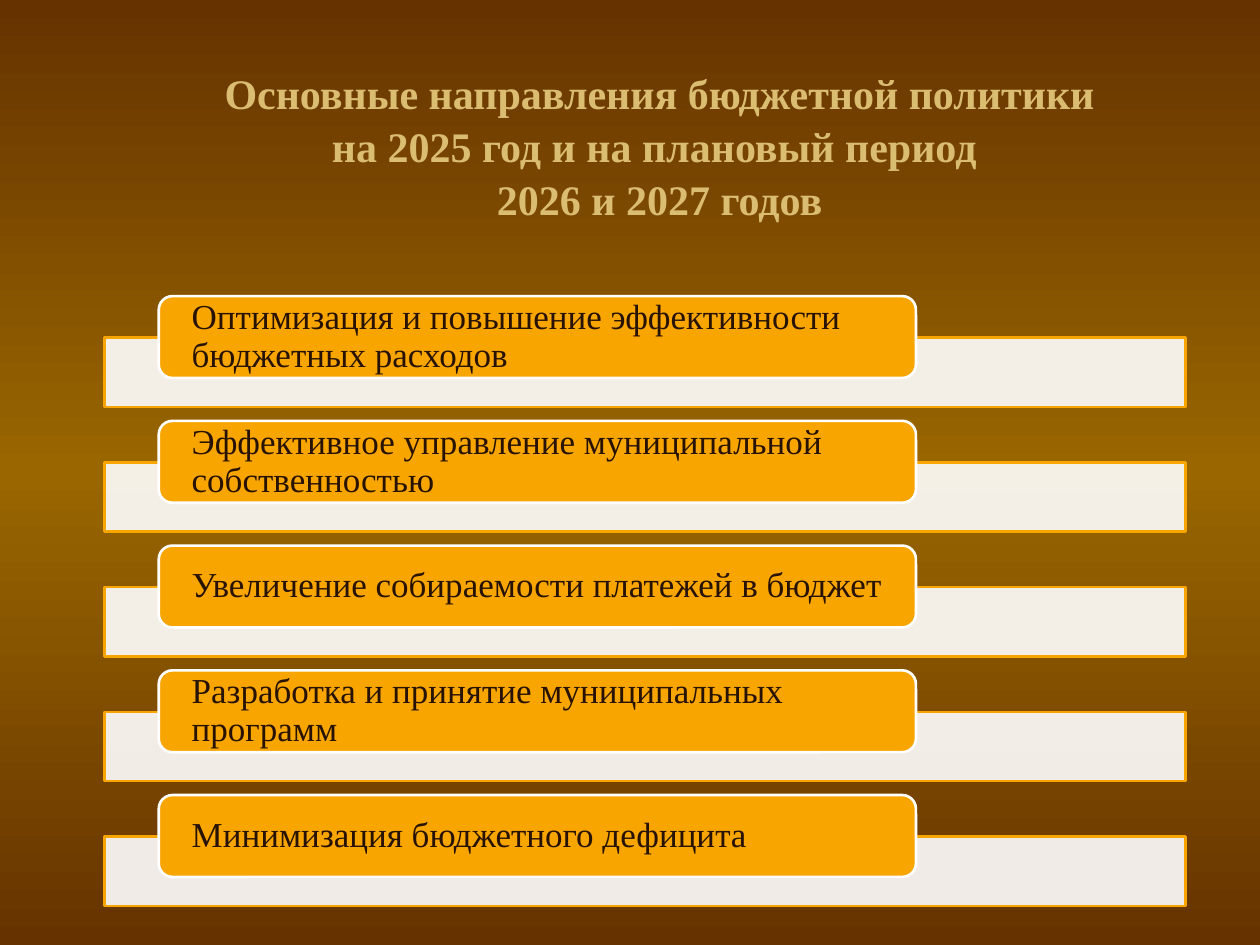
import copy

import lxml.etree
import pptx
import pptx.dml.color
import pptx.enum.shapes
import pptx.enum.text
import pptx.oxml.ns
import pptx.util

Inches = pptx.util.Inches
SHAPES = pptx.enum.shapes.MSO_SHAPE
ALIGN = pptx.enum.text.PP_ALIGN

FONT = "Times New Roman"
BROWN, OCHRE = "663300", "996600"
SAND, ORANGE, WHITE, DARK = "DBBD71", "F8A500", "FFFFFF", "281302"

TITLE = ("Основные направления бюджетной политики\v"
         "на 2025 год и на плановый период \v"
         "2026 и 2027 годов")
DIRECTIONS = [
    "Оптимизация и повышение эффективности бюджетных расходов",
    "Эффективное управление муниципальной собственностью",
    "Увеличение собираемости платежей в бюджет",
    "Разработка и принятие муниципальных программ",
    "Минимизация бюджетного дефицита",
]
FIRST_TOP, PITCH = 2.35, 0.99


def color(value):
    """Return the colour for a hex string."""
    return pptx.dml.color.RGBColor.from_string(value)


def paint_background(slide, stops):
    """Fill the slide with a vertical gradient of (position, colour) stops."""
    fill = slide.background.fill
    fill.gradient()
    fill.gradient_angle = 90
    stop_list = slide.element.xpath(".//a:gsLst")[0]
    while len(stop_list) < len(stops):
        stop_list.append(copy.deepcopy(stop_list[-1]))
    for stop, (position, value) in zip(fill.gradient_stops, stops):
        stop.position = position
        stop.color.rgb = color(value)


def write_text(shape, text, size, value, align, bold=False, side=0.1, spacing=1.0):
    """Put one vertically centred paragraph into a shape."""
    frame = shape.text_frame
    frame.word_wrap = True
    frame.vertical_anchor = pptx.enum.text.MSO_ANCHOR.MIDDLE
    frame.margin_left = frame.margin_right = Inches(side)
    frame.margin_top = frame.margin_bottom = 0
    frame.text = text
    para = frame.paragraphs[0]
    para.alignment = align
    para.line_spacing = spacing
    for span in para.runs:
        span.font.name = FONT
        span.font.size = pptx.util.Pt(size)
        span.font.bold = bold
        span.font.color.rgb = color(value)


def add_box(slide, kind, left, top, width, height, fill, line, opacity=100):
    """Add a filled and outlined shape without a shadow."""
    box = slide.shapes.add_shape(
        kind, Inches(left), Inches(top), Inches(width), Inches(height))
    box.shadow.inherit = False
    box.fill.solid()
    box.fill.fore_color.rgb = color(fill)
    box.line.color.rgb = color(line)
    box.line.width = pptx.util.Pt(1.5)
    if opacity < 100:
        fill_color = box.element.xpath("./p:spPr/a:solidFill/a:srgbClr")[0]
        lxml.etree.SubElement(fill_color, pptx.oxml.ns.qn("a:alpha"),
                              val=str(opacity * 1000))
    return box


def add_title(slide):
    """Add the centred slide title."""
    box = slide.shapes.add_textbox(
        Inches(0.9), Inches(0.76), Inches(8.67), Inches(0.77))
    write_text(box, TITLE, 24, SAND, ALIGN.CENTER, bold=True, spacing=1.05)


def add_direction(slide, text, top):
    """Add a pale bar with an orange label overlapping its upper edge."""
    add_box(slide, SHAPES.RECTANGLE, 0.83, top + 0.33, 8.58, 0.55,
            WHITE, ORANGE, opacity=90)
    label = add_box(slide, SHAPES.ROUNDED_RECTANGLE, 1.26, top, 6.01, 0.65,
                    ORANGE, WHITE)
    write_text(label, text, 20, DARK, ALIGN.LEFT, side=0.23, spacing=0.9)


def main():
    """Build and save the slide."""
    deck = pptx.Presentation()
    deck.slide_width, deck.slide_height = Inches(10), Inches(7.5)
    slide = deck.slides.add_slide(deck.slide_layouts[6])
    paint_background(slide, [(0, BROWN), (0.5, OCHRE), (1, BROWN)])
    add_title(slide)
    for index, text in enumerate(DIRECTIONS):
        add_direction(slide, text, FIRST_TOP + index * PITCH)
    deck.save("out.pptx")


if __name__ == "__main__":
    main()
